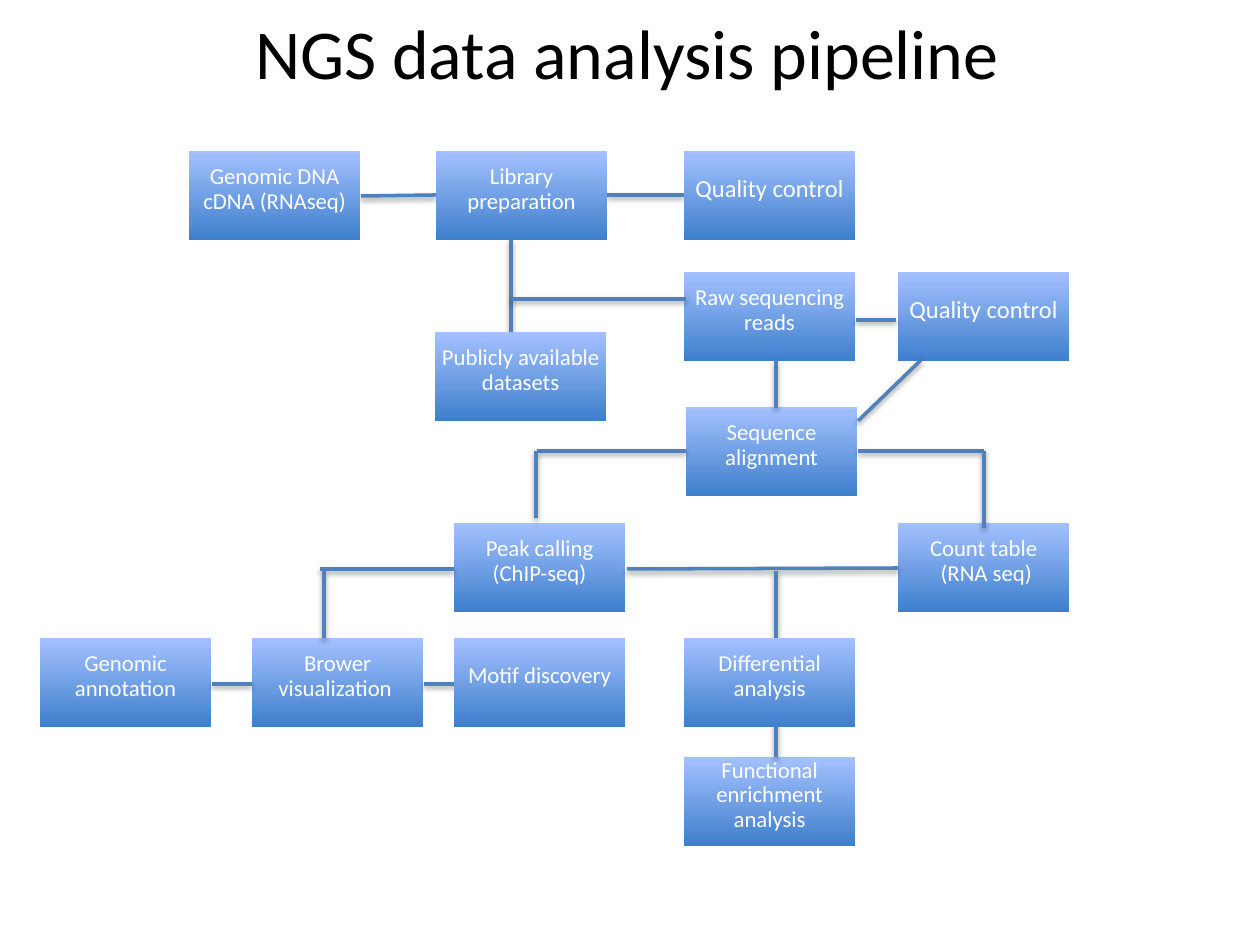
import pptx
import pptx.dml.color
import pptx.enum.shapes
import pptx.enum.text
import pptx.oxml
import pptx.util

COLORS = {"top": "A4C1FF", "bottom": "3E7FCC", "line": "4F81BD", "label": "FFFFFF", "title": "000000"}
SCALE = 914400 / 126
BOX_WIDTH, BOX_HEIGHT = 171, 89
SHADOW = (
    '<a:effectLst xmlns:a="http://schemas.openxmlformats.org/drawingml/2006/main">'
    '<a:outerShdw blurRad="40000" dist="20000" dir="5400000" rotWithShape="0">'
    '<a:srgbClr val="000000"><a:alpha val="38000"/></a:srgbClr>'
    '</a:outerShdw></a:effectLst>'
)


def px(length):
    return pptx.util.Emu(round(length * SCALE))


def color(name):
    return pptx.dml.color.RGBColor.from_string(COLORS[name])


def apply(target, values):
    for name, value in values.items():
        setattr(target, name, value)


class Flowchart:
    font = "Calibri"
    frame_format = {
        "word_wrap": True,
        "vertical_anchor": pptx.enum.text.MSO_ANCHOR.MIDDLE,
    }
    box_margins = {
        "margin_left": px(1),
        "margin_right": px(1),
        "margin_top": px(1),
        "margin_bottom": px(13),
    }

    def __init__(self, page):
        self.page = page

    def text(self, frame, lines, size, ink, spacing):
        apply(frame, self.frame_format)
        for index, line in enumerate(lines):
            para = frame.add_paragraph() if index else frame.paragraphs[0]
            apply(para, {"alignment": pptx.enum.text.PP_ALIGN.CENTER, "line_spacing": spacing})
            span = para.add_run()
            span.text = line
            apply(span.font, {"name": self.font, "size": pptx.util.Pt(size)})
            span.font.color.rgb = color(ink)

    def title(self, text, left, top, width, height):
        title = self.page.shapes.title
        apply(title, {"left": px(left), "top": px(top), "width": px(width), "height": px(height)})
        self.text(title.text_frame, [text], 40, "title", 1.0)

    def box(self, left, top, lines, size=13):
        box = self.page.shapes.add_shape(
            pptx.enum.shapes.MSO_SHAPE.RECTANGLE, px(left), px(top), px(BOX_WIDTH), px(BOX_HEIGHT)
        )
        box.shadow.inherit = False
        box.line.fill.background()
        box.fill.gradient()
        box.fill.gradient_angle = 90
        for stop, name in zip(box.fill.gradient_stops, ("bottom", "top")):
            stop.color.rgb = color(name)
        apply(box.text_frame, self.box_margins)
        self.text(box.text_frame, lines, size, "label", 0.9)

    def line(self, *ends):
        line = self.page.shapes.add_connector(
            pptx.enum.shapes.MSO_CONNECTOR.STRAIGHT, *map(px, ends)
        )
        line.line.color.rgb = color("line")
        line.line.width = pptx.util.Pt(2)
        line._element.spPr.append(pptx.oxml.parse_xml(SHADOW))


BACK_BOXES = [
    (684, 272, ["Raw sequencing reads"]),
    (252, 638, ["Brower visualization "]),
    (40, 638, ["Genomic annotation"]),
    (684, 757, ["Functional enrichment analysis"]),
    (898, 272, ["Quality control"], 14),
    (686, 407, ["Sequence alignment"]),
    (454, 523, ["Peak calling", "(ChIP-seq)"]),
    (898, 523, ["Count table", " (RNA seq)"]),
]
LINES = [
    (454, 569, 320, 569),
    (324, 571, 324, 638),
    (627, 569, 898, 568),
    (776, 571, 776, 757),
    (776, 360, 776, 408),
    (537, 451, 686, 451),
    (536, 451, 536, 518),
    (896, 320, 856, 320),
    (984, 451, 858, 451),
    (984, 451, 984, 528),
    (464, 684, 424, 684),
    (252, 684, 212, 684),
    (511, 240, 511, 338),
    (511, 299, 686, 299),
    (436, 195, 361, 196),
    (684, 195, 607, 195),
    (921, 360, 858, 421),
]
FRONT_BOXES = [
    (454, 638, ["Motif discovery"]),
    (684, 638, ["Differential analysis"]),
    (436, 151, ["Library preparation"]),
    (435, 332, ["Publicly available datasets"]),
    (189, 151, ["Genomic DNA", "cDNA (RNAseq)"]),
    (684, 151, ["Quality control"], 14),
]


def main():
    deck = pptx.Presentation()
    apply(deck, {"slide_width": px(1260), "slide_height": px(945)})
    chart = Flowchart(deck.slides.add_slide(deck.slide_layouts[5]))
    chart.title("NGS data analysis pipeline", 60, -28, 1134, 158)
    for box in BACK_BOXES:
        chart.box(*box)
    for line in LINES:
        chart.line(*line)
    for box in FRONT_BOXES:
        chart.box(*box)
    deck.save("out.pptx")


if __name__ == "__main__":
    main()
